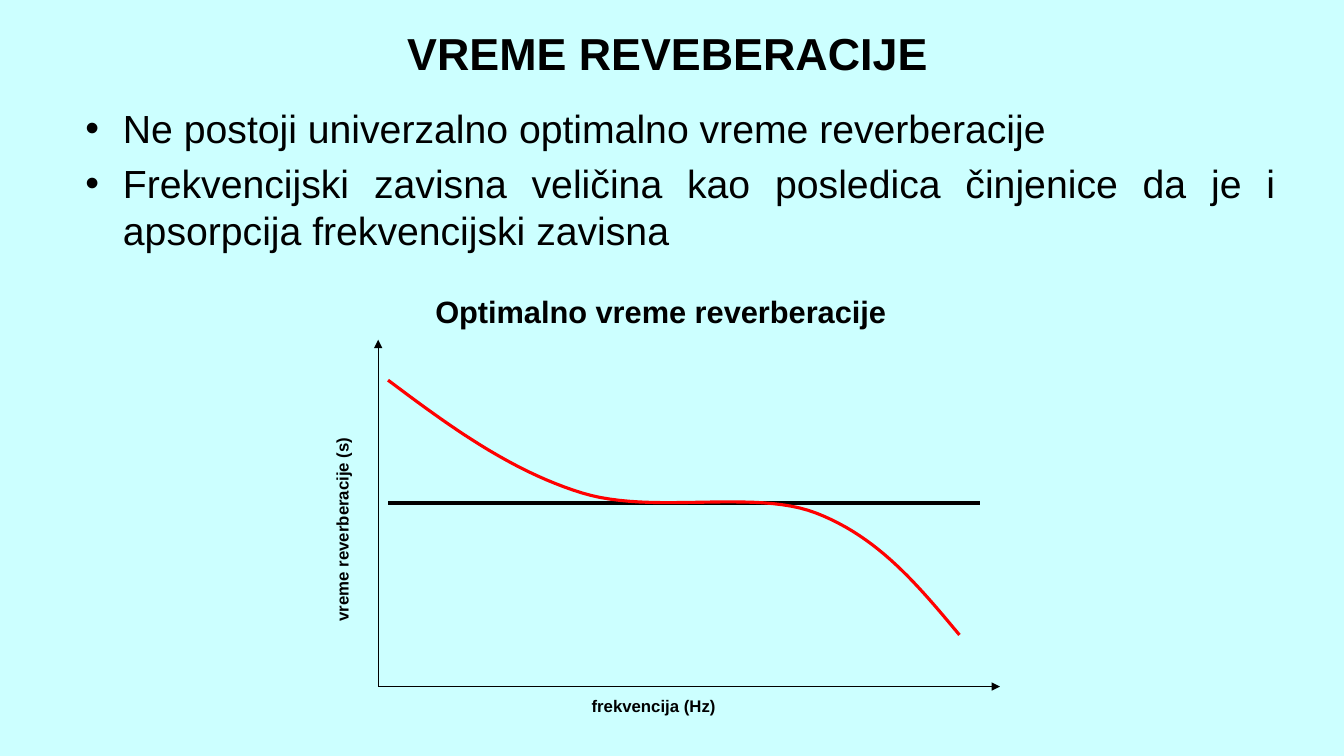
from lxml import etree
from pptx import Presentation
from pptx import util as u
from pptx.dml.color import RGBColor
from pptx.enum import shapes, text
from pptx.oxml.ns import qn


def color(hex_string):
    return RGBColor.from_string(hex_string)


def add_text(slide, box, paragraphs, size, bold=False, align=text.PP_ALIGN.LEFT):
    sp = slide.shapes.add_textbox(*(u.Cm(v) for v in box))
    tf = sp.text_frame
    tf.word_wrap = True
    for i, line in enumerate(paragraphs):
        p = tf.paragraphs[0] if i == 0 else tf.add_paragraph()
        p.alignment = align
        r = p.add_run()
        r.text = line
        r.font.name = "Arial"
        r.font.size = u.Pt(size)
        r.font.bold = bold
        r.font.color.rgb = color("000000")
    return sp


prs = Presentation()
prs.slide_width, prs.slide_height = u.Cm(33.87), u.Cm(19.05)
s = prs.slides.add_slide(prs.slide_layouts[6])
s.background.fill.solid()
s.background.fill.fore_color.rgb = color("CCFFFF")

# Bulleted statements
body = add_text(s, (1.9, 2.51, 30.48, 6.35), [
    "Ne postoji univerzalno optimalno vreme reverberacije",
    "Frekvencijski zavisna veličina kao posledica činjenice da je i "
    "apsorpcija frekvencijski zavisna",
], 28)
for p in body.text_frame.paragraphs:
    pPr = p._p.get_or_add_pPr()
    pPr.set("marL", str(u.Cm(0.95)))
    pPr.set("indent", str(-u.Cm(0.95)))
    etree.SubElement(pPr, qn("a:buFont"), typeface="Arial")
    etree.SubElement(pPr, qn("a:buChar"), char="•")
p.alignment = text.PP_ALIGN.JUSTIFY
p.space_before = u.Pt(5.6)

# Axes with arrowheads, and the flat reference line
origin = (9.53, 17.3)
for start, end, width, arrow in [
    (origin, (25.2, 17.3), 0.75, True),
    (origin, (9.53, 8.56), 0.75, True),
    ((9.78, 12.67), (24.69, 12.67), 3, False),
]:
    line = s.shapes.add_connector(shapes.MSO_CONNECTOR.STRAIGHT,
                                  *(u.Cm(v) for v in start + end))
    line.line.color.rgb = color("000000")
    line.line.width = u.Pt(width)
    if arrow:
        etree.SubElement(line.line._get_or_add_ln(), qn("a:tailEnd"), type="triangle")
    etree.SubElement(line._element.spPr, qn("a:effectLst"))

# Axis labels
add_text(s, (14.66, 17.4, 4.62, 0.91), ["frekvencija (Hz)"], 12, True)
label = add_text(s, (5.56, 12.29, 6.3, 0.94), ["vreme reverberacije (s)"], 12, True)
label.rotation = 270

# Optimal reverberation curve: three cubic Bézier segments
knots = [(9.78, 9.58), (11.3, 10.72), (12.85, 11.86), (14.66, 12.42),
         (16.46, 12.98), (19, 12.32), (20.57, 12.93),
         (22.15, 13.54), (23.16, 14.78), (24.18, 16)]
steps = 24
points = [knots[0]]
for k in range(0, 9, 3):
    for i in range(1, steps + 1):
        t = i / steps
        weights = ((1 - t) ** 3, 3 * t * (1 - t) ** 2, 3 * t ** 2 * (1 - t), t ** 3)
        points.append(tuple(sum(w * knot[axis] for w, knot in zip(weights, knots[k:k + 4]))
                            for axis in (0, 1)))
points = [(u.Cm(x), u.Cm(y)) for x, y in points]
builder = s.shapes.build_freeform(*points[0])
builder.add_line_segments(points[1:], close=False)
curve = builder.convert_to_shape()
curve.shadow.inherit = False
curve.fill.background()
curve.line.color.rgb = color("FF0000")
curve.line.width = u.Pt(2.25)

# Chart heading and slide title
add_text(s, (10.72, 7.26, 12.01, 1.19), ["Optimalno vreme reverberacije"], 22, True)
add_text(s, (4.72, 0.53, 24.21, 1.63), ["VREME REVEBERACIJE"], 32, True,
         text.PP_ALIGN.CENTER)

prs.save("out.pptx")
